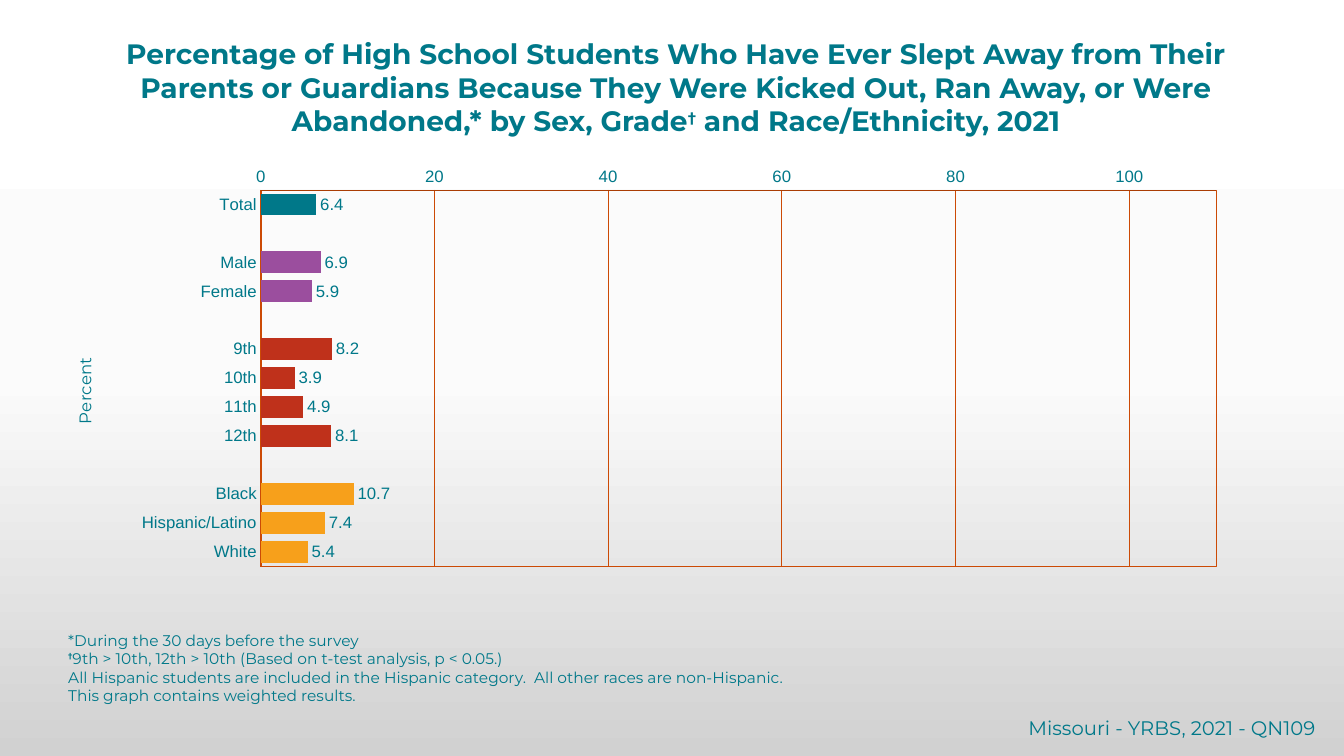
from copy import deepcopy

from pptx import Presentation
from pptx.chart.data import CategoryChartData
from pptx.dml.color import RGBColor
from pptx.enum.chart import XL_CHART_TYPE, XL_LABEL_POSITION as LabelPos, XL_TICK_MARK as Tick
from pptx.enum.text import MSO_ANCHOR as Anchor, MSO_AUTO_SIZE as AutoSize, PP_ALIGN as Align
from pptx.oxml import parse_xml
from pptx.oxml.ns import nsdecls, qn
from pptx.util import Cm, Pt

TEAL = "007889"
ORANGE = "CC4A05"
HEAD_FONT = "Montserrat"
AXIS_FONT = "Arial"
BACKGROUND = [(0, "FFFFFF"), (0.5, "FBFBFB"), (1, "D1D1D1")]
GROUPS = [
    (TEAL, [("Total", 6.4)]),
    ("9B4E9E", [("Male", 6.9), ("Female", 5.9)]),
    ("BF311B", [("9th", 8.2), ("10th", 3.9), ("11th", 4.9), ("12th", 8.1)]),
    ("F7A01B", [("Black", 10.7), ("Hispanic/Latino", 7.4), ("White", 5.4)]),
]
TITLE = [[
    ("Percentage of High School Students Who Have Ever Slept Away from Their Parents or Guardians "
     "Because They Were Kicked Out, Ran Away, or Were Abandoned,* by Sex, Grade", 20, True, 0),
    ("†", 17, True, 40),
    (" and Race/Ethnicity, 2021", 20, True, 0),
]]
NOTES = [
    [("*During the 30 days before the survey", 11, False, 0)],
    [("†", 9, True, 50),
     ("9th > 10th, 12th > 10th (Based on t-test analysis, p < 0.05.)", 11, False, 0)],
    [("All Hispanic students are included in the Hispanic category.  "
      "All other races are non-Hispanic.", 11, False, 0)],
    [("This graph contains weighted results.", 11, False, 0)],
]
SOURCE = [[("Missouri - YRBS, 2021 - QN109", 14, False, 0)]]


def rgb(color):
    """Return the colour for a hex string."""
    return RGBColor.from_string(color)


def style_font(font, size, name, color=TEAL, bold=False):
    """Set size, face, colour and weight of a font."""
    font.size, font.name, font.bold = Pt(size), name, bold
    font.color.rgb = rgb(color)


def style_line(line, color, width):
    """Set colour and width of a line."""
    line.color.rgb = rgb(color)
    line.width = Pt(width)


def set_background(slide):
    """Fill the slide with a vertical three-stop gradient."""
    fill = slide.background.fill
    fill.gradient()
    fill.gradient_angle = 270
    stops = slide.element.xpath(".//p:bg//a:gsLst")[0]
    stops.append(deepcopy(stops[0]))
    for stop, (position, color) in zip(fill.gradient_stops, BACKGROUND):
        stop.position = position
        stop.color.rgb = rgb(color)


def place(sp, left, top, width, height):
    """Move and size a shape, in centimetres."""
    sp.left, sp.top, sp.width, sp.height = Cm(left), Cm(top), Cm(width), Cm(height)


def write(sp, paragraphs, align=Align.LEFT, anchor=Anchor.TOP):
    """Write paragraphs of (text, size, bold, baseline) runs into a shape."""
    tf = sp.text_frame
    tf.word_wrap, tf.auto_size, tf.vertical_anchor = True, AutoSize.NONE, anchor
    for i, runs in enumerate(paragraphs):
        p = tf.add_paragraph() if i else tf.paragraphs[0]
        p.alignment = align
        for text, size, bold, baseline in runs:
            r = p.add_run()
            r.text = text
            style_font(r.font, size, HEAD_FONT, bold=bold)
            if baseline:
                r._r.get_or_add_rPr().set("baseline", str(baseline * 1000))


def set_layout(parent, index, target="", **values):
    """Give a chart part a manual layout in fractions of the chart."""
    old = parent.find(qn("c:layout"))
    if old is not None:
        parent.remove(old)
    items = {"xMode": "edge", "yMode": "edge", **values}
    if target:
        items = {"layoutTarget": target, **items}
    body = "".join(f'<c:{key} val="{value}"/>' for key, value in items.items())
    parent.insert(index, parse_xml(
        f'<c:layout {nsdecls("c")}><c:manualLayout>{body}</c:manualLayout></c:layout>'))


def frame_plot(plot_area):
    """Outline the plot area."""
    plot_area.append(parse_xml(
        f'<c:spPr {nsdecls("c", "a")}><a:noFill/><a:ln w="6350"><a:solidFill>'
        f'<a:srgbClr val="{ORANGE}"/></a:solidFill></a:ln></c:spPr>'))


def style_axis(axis, color):
    """Format the line, ticks and labels of an axis."""
    axis.major_tick_mark = axis.minor_tick_mark = Tick.NONE
    style_line(axis.format.line, color, 0.25)
    style_font(axis.tick_labels.font, 12, AXIS_FONT)


def style_value_axis(axis):
    """Set scale, gridlines and the upright title of the value axis."""
    style_axis(axis, "AA3D04")
    axis.minimum_scale, axis.maximum_scale, axis.major_unit = 0, 110, 20
    axis.tick_labels.number_format = "General"
    axis.tick_labels.number_format_is_linked = False
    axis.has_major_gridlines = True
    style_line(axis.major_gridlines.format.line, ORANGE, 0.5)
    tf = axis.axis_title.text_frame
    tf.text = "Percent"
    style_font(tf.paragraphs[0].runs[0].font, 12, HEAD_FONT)
    title = axis.axis_title._element
    title.xpath(".//a:bodyPr")[0].set("rot", "-5400000")
    set_layout(title, 1, x=0.01, y=0.39)


def add_bars(slide):
    """Add the bar chart, with an empty row between the groups."""
    rows = []
    for color, bars in GROUPS:
        if rows:
            rows.append(("", None, color))
        rows += [(label, value, color) for label, value in bars]
    data = CategoryChartData()
    data.categories = [label for label, _, _ in rows]
    data.add_series("Series 1", [value for _, value, _ in rows])
    chart = slide.shapes.add_chart(XL_CHART_TYPE.BAR_CLUSTERED, Cm(1.47), Cm(4.24),
                                   Cm(30.91), Cm(11.86), data).chart
    chart.has_title = chart.has_legend = False
    style_font(chart.font, 18, HEAD_FONT, "012169")

    plot = chart.plots[0]
    plot.gap_width, plot.vary_by_categories, plot.has_data_labels = 34, False, True
    labels = plot.data_labels
    labels.show_value, labels.position = True, LabelPos.OUTSIDE_END
    labels.number_format, labels.number_format_is_linked = "#,##0.0", False
    style_font(labels.font, 12, AXIS_FONT)
    series = plot.series[0]
    series.format.fill.solid()
    series.format.fill.fore_color.rgb = rgb(TEAL)
    for i, (_, value, color) in enumerate(rows):
        if value is not None:
            fill = series.points[i].format.fill
            fill.solid()
            fill.fore_color.rgb = rgb(color)

    style_axis(chart.category_axis, ORANGE)
    chart.category_axis.reverse_order = True
    style_value_axis(chart.value_axis)
    plot_area = chart.element.xpath(".//c:plotArea")[0]
    set_layout(plot_area, 0, "inner", x=0.165, y=0.035, w=0.779, h=0.81)
    frame_plot(plot_area)


def main():
    """Build the slide and save it."""
    prs = Presentation()
    prs.slide_width, prs.slide_height = Cm(33.87), Cm(19.05)
    slide = prs.slides.add_slide(prs.slide_layouts[5])
    set_background(slide)
    add_bars(slide)
    title = slide.shapes.title
    place(title, 1.91, 0.79, 30.25, 2.82)
    write(title, TITLE, Align.CENTER)
    notes = slide.shapes.add_textbox(Cm(1.47), Cm(17.15), Cm(30.91), Cm(0.74))
    write(notes, NOTES, anchor=Anchor.BOTTOM)
    source = slide.shapes.add_textbox(Cm(9.53), Cm(17.91), Cm(23.88), Cm(0.86))
    write(source, SOURCE, Align.RIGHT)
    prs.save("out.pptx")


if __name__ == "__main__":
    main()
